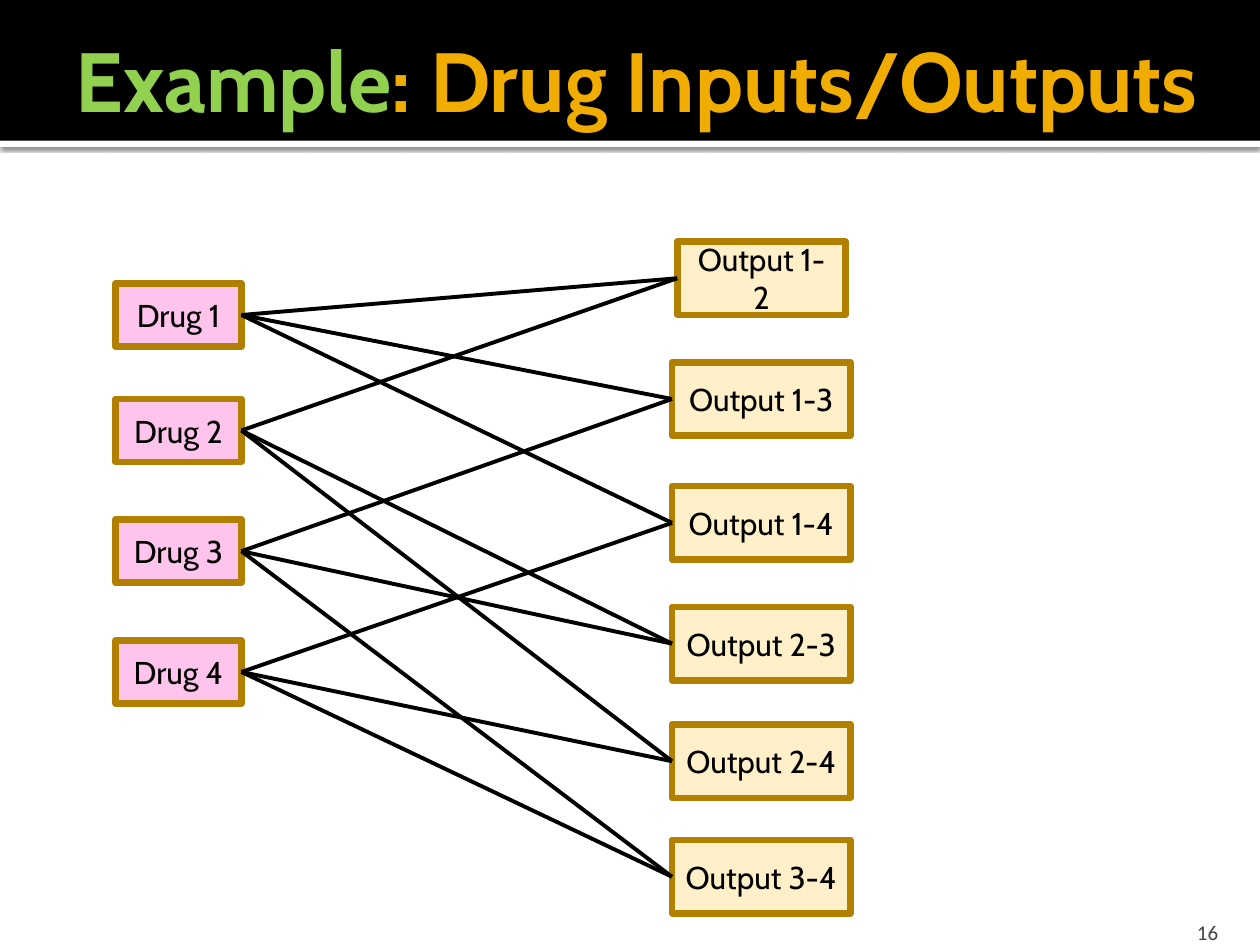
"""Build a slide that links each drug to the outputs of its pairs."""
from dataclasses import dataclass
from itertools import combinations

from lxml.etree import SubElement
from pptx import Presentation
from pptx.dml.color import RGBColor
from pptx.enum.shapes import MSO_CONNECTOR as Connector, MSO_SHAPE as Preset
from pptx.enum.text import MSO_ANCHOR as Anchor, PP_ALIGN as Align
from pptx.oxml.ns import qn
from pptx.shapes.autoshape import Shape
from pptx.util import Inches, Pt

BLACK = RGBColor(0x00, 0x00, 0x00)
WHITE = RGBColor(0xFF, 0xFF, 0xFF)
GREEN = RGBColor(0x92, 0xD0, 0x50)
AMBER = RGBColor(0xF0, 0xAD, 0x00)
BRONZE = RGBColor(0xB2, 0x80, 0x00)
PINK = RGBColor(0xFF, 0xC4, 0xEC)
CREAM = RGBColor(0xFF, 0xF0, 0xC9)
GREY = RGBColor(0x45, 0x45, 0x45)

COLUMNS, ROWS = 120, 90
UNIT = Inches(10) / COLUMNS
DRUG_ROWS = (27, 38, 49.5, 61)
OUTPUT_ROWS = (23, 34.5, 46.3, 57.8, 69, 80)
RIGHT_SIDE, LEFT_SIDE = 3, 1


@dataclass(frozen=True)
class Area:
    """A rectangle in grid columns and rows."""
    column: float
    row: float
    width: float
    height: float

    def lengths(self) -> list[int]:
        """Return left, top, width and height as slide lengths."""
        return [round(n * UNIT) for n in (self.column, self.row, self.width, self.height)]


@dataclass(frozen=True)
class Words:
    """A piece of text and its look."""
    text: str
    size: float
    color: RGBColor
    font: str = "Cabin"
    bold: bool = False


def write(shape: Shape, pieces: list[Words], align: Align, **frame_format) -> None:
    """Write the pieces as one paragraph in the shape."""
    frame = shape.text_frame
    for key, value in {"word_wrap": True, "vertical_anchor": Anchor.MIDDLE, **frame_format}.items():
        setattr(frame, key, value)
    paragraph = frame.paragraphs[0]
    paragraph.alignment = align
    for words in pieces:
        run = paragraph.add_run()
        run.text = words.text
        run.font.color.rgb = words.color
        for key, value in {"size": Pt(words.size), "name": words.font, "bold": words.bold}.items():
            setattr(run.font, key, value)


def add_band(shapes, area: Area, fill: RGBColor) -> Shape:
    """Add a plain filled rectangle without outline."""
    band = shapes.add_shape(Preset.RECTANGLE, *area.lengths())
    band.shadow.inherit = False
    band.fill.solid()
    band.fill.fore_color.rgb = fill
    band.line.fill.background()
    return band


def add_box(shapes, area: Area, label: str, fill: RGBColor) -> Shape:
    """Add an outlined box with a centred label."""
    box = add_band(shapes, area, fill)
    box.line.color.rgb = BRONZE
    box.line.width = Pt(3.78)
    write(box, [Words(label, 18, BLACK)], Align.CENTER)
    return box


def add_link(shapes, drug: Shape, output: Shape) -> None:
    """Join a drug's right side to an output's left side."""
    link = shapes.add_connector(Connector.STRAIGHT, 0, 0, 0, 0)
    link.begin_connect(drug, RIGHT_SIDE)
    link.end_connect(output, LEFT_SIDE)
    link.line.color.rgb = BLACK
    link.line.width = Pt(2.25)
    SubElement(link._element.spPr, qn("a:effectLst"))


def add_soft_shadow(band: Shape) -> None:
    """Give the band a soft shadow below it."""
    effects = band._element.spPr.find(qn("a:effectLst"))
    shadow = SubElement(effects, qn("a:outerShdw"), blurRad=str(Pt(2.5)), dist=str(Pt(0.8)),
                        dir="5400000", algn="tl", rotWithShape="0")
    color = SubElement(shadow, qn("a:srgbClr"), val=str(BLACK))
    SubElement(color, qn("a:alpha"), val="60000")


def main() -> None:
    """Build and save the slide."""
    deck = Presentation()
    deck.slide_width, deck.slide_height = round(COLUMNS * UNIT), round(ROWS * UNIT)
    shapes = deck.slides.add_slide(deck.slide_layouts[6]).shapes

    add_soft_shadow(add_band(shapes, Area(0, 13.4, COLUMNS, 0.6), WHITE))
    add_band(shapes, Area(0, 0, COLUMNS, 13.4), BLACK)
    title = shapes.add_textbox(*Area(6, 2, 114, 11).lengths())
    write(title, [Words("Example", 48, GREEN, bold=True),
                  Words(": Drug Inputs/Outputs", 48, AMBER, bold=True)],
          Align.LEFT, margin_right=Inches(0.05))
    page_number = shapes.add_textbox(*Area(107.6, 86.4, 9.6, 3.6).lengths())
    write(page_number, [Words("16", 12, GREY, "Calibri")], Align.RIGHT,
          vertical_anchor=Anchor.BOTTOM, margin_bottom=0)

    drugs = {number: add_box(shapes, Area(11, row, 12, 6), f"Drug {number}", PINK)
             for number, row in enumerate(DRUG_ROWS, 1)}
    outputs = {}
    for pair, row in zip(combinations(drugs, 2), OUTPUT_ROWS):
        inset = 0.5 if pair == (1, 2) else 0
        area = Area(64 + inset, row, 17 - 2 * inset, 7)
        outputs[pair] = add_box(shapes, area, "Output {}-{}".format(*pair), CREAM)
    for number, drug in drugs.items():
        for pair, output in outputs.items():
            if number in pair:
                add_link(shapes, drug, output)

    deck.save("out.pptx")


if __name__ == "__main__":
    main()
